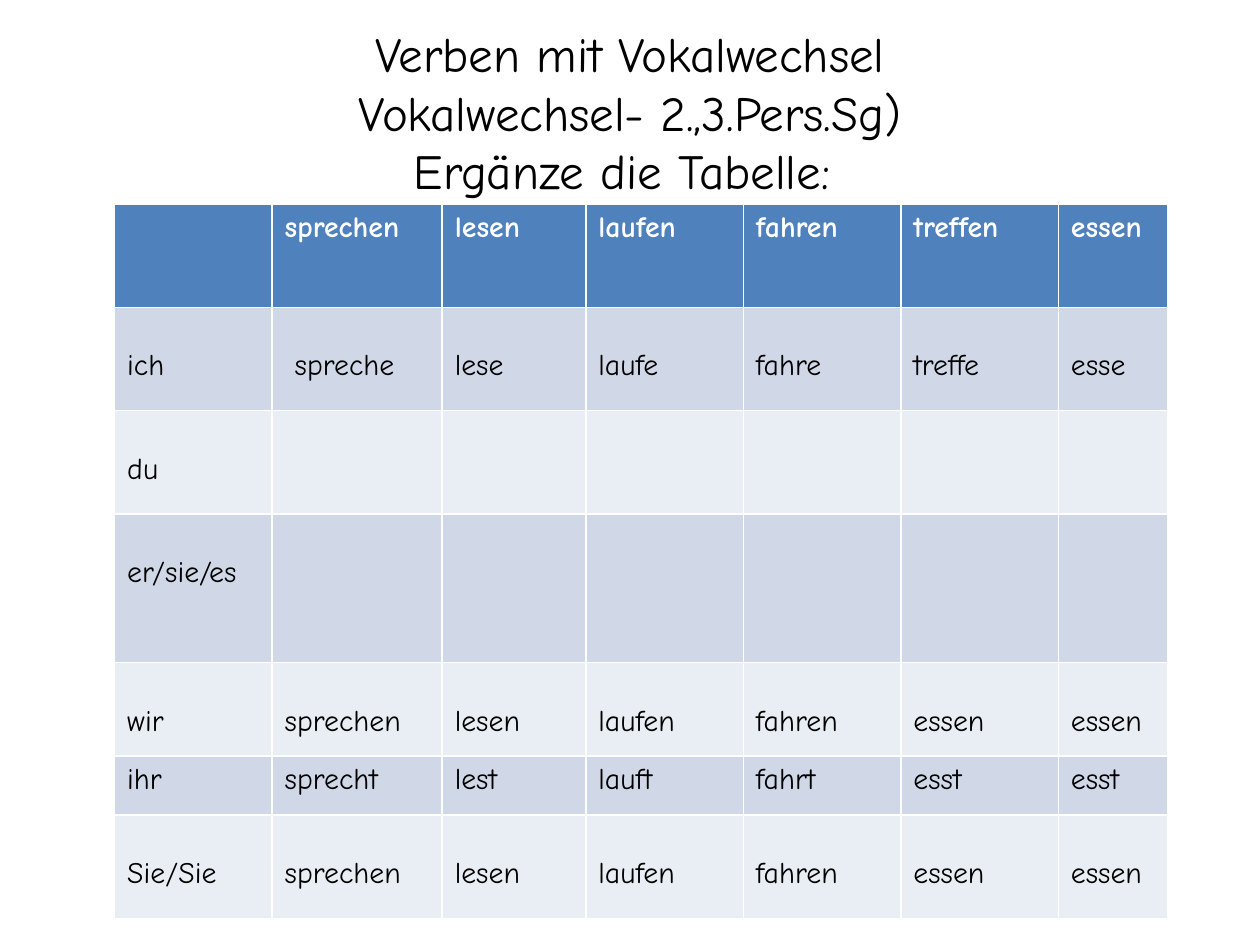
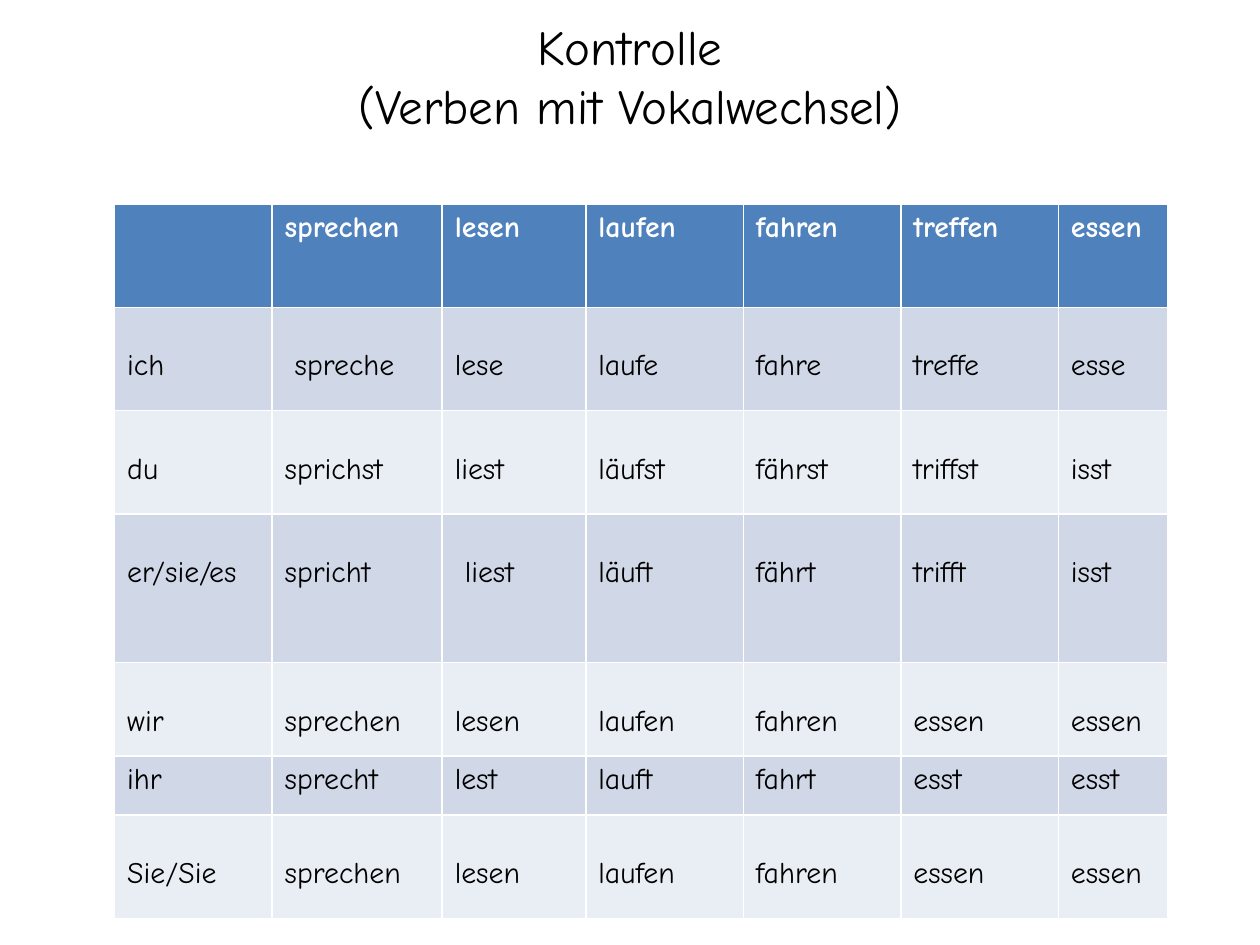
"""Build two slides on German verbs with a vowel change: a gap table and its key."""
from pptx import Presentation
from pptx.dml.color import RGBColor
from pptx.enum import text
from pptx.util import Inches, Pt

FONT = "Comic Neue"
BLACK = RGBColor(0x00, 0x00, 0x00)
WHITE = RGBColor(0xFF, 0xFF, 0xFF)
BLUE = RGBColor(0x4F, 0x81, 0xBD)
BANDS = [RGBColor(0xE9, 0xED, 0xF4), RGBColor(0xD0, 0xD8, 0xE8)]

WIDTHS = [1.25, 1.35, 1.14, 1.25, 1.25, 1.25, 0.87]
HEIGHTS = [0.82, 0.82, 0.82, 1.18, 0.74, 0.47, 0.82]
VERBS = ["", "sprechen", "lesen", "laufen", "fahren", "treffen", "essen"]
ICH = ["ich", " spreche", "lese", "laufe", "fahre", "treffe", "esse"]
DU = ["du", "sprichst", "liest", "läufst", "fährst", "triffst", "isst"]
ER = ["er/sie/es", "spricht", " liest", "läuft", "fährt", "trifft", "isst"]
PLURAL = ["sprechen", "lesen", "laufen", "fahren", "essen", "essen"]
IHR = ["ihr", "sprecht", "lest", "lauft", "fahrt", "esst", "esst"]
TAIL = [["wir"] + PLURAL, IHR, ["Sie/Sie"] + PLURAL]

TASK = "Verben mit Vokalwechsel\vVokalwechsel- 2.,3.Pers.Sg)\vErgänze die Tabelle: "
KEY = "Kontrolle\v(Verben mit Vokalwechsel)"
PAGES = [
    (TASK, 0.3, 1.17, 0.05, [VERBS, ICH, DU[:1] + [""] * 6, ER[:1] + [""] * 6] + TAIL),
    (KEY, 0.44, 0.79, 0.52, [VERBS, ICH, DU, ER] + TAIL),
]


def style(para, size, color, bold=False):
    font = para.font
    font.name, font.size, font.bold = FONT, Pt(size), bold
    font.color.rgb = color


deck = Presentation()
deck.slide_width, deck.slide_height = Inches(10), Inches(7.5)

for title, top, height, inset, rows in PAGES:
    slide = deck.slides.add_slide(deck.slide_layouts[6])

    box = slide.shapes.add_textbox(Inches(0.5), Inches(top), Inches(9), Inches(height))
    frame = box.text_frame
    frame.word_wrap = True
    frame.vertical_anchor = text.MSO_ANCHOR.MIDDLE
    frame.margin_bottom = Inches(inset)
    frame.text = title
    para = frame.paragraphs[0]
    para.alignment = text.PP_ALIGN.CENTER
    style(para, 28, BLACK)

    table = slide.shapes.add_table(
        len(rows), len(VERBS), Inches(0.91), Inches(1.62),
        Inches(sum(WIDTHS)), Inches(sum(HEIGHTS))).table
    for col, width in zip(table.columns, WIDTHS):
        col.width = Inches(width)
    for r, words in enumerate(rows):
        table.rows[r].height = Inches(HEIGHTS[r])
        head = r == 0
        flush = head or words is IHR
        for c, word in enumerate(words):
            cell = table.cell(r, c)
            cell.fill.solid()
            cell.fill.fore_color.rgb = BLUE if head else BANDS[r % 2]
            cell.margin_top = Inches(0.05 if flush else 0.33)
            cell.text = word
            style(cell.text_frame.paragraphs[0], 17, WHITE if head else BLACK, head)

deck.save("out.pptx")
